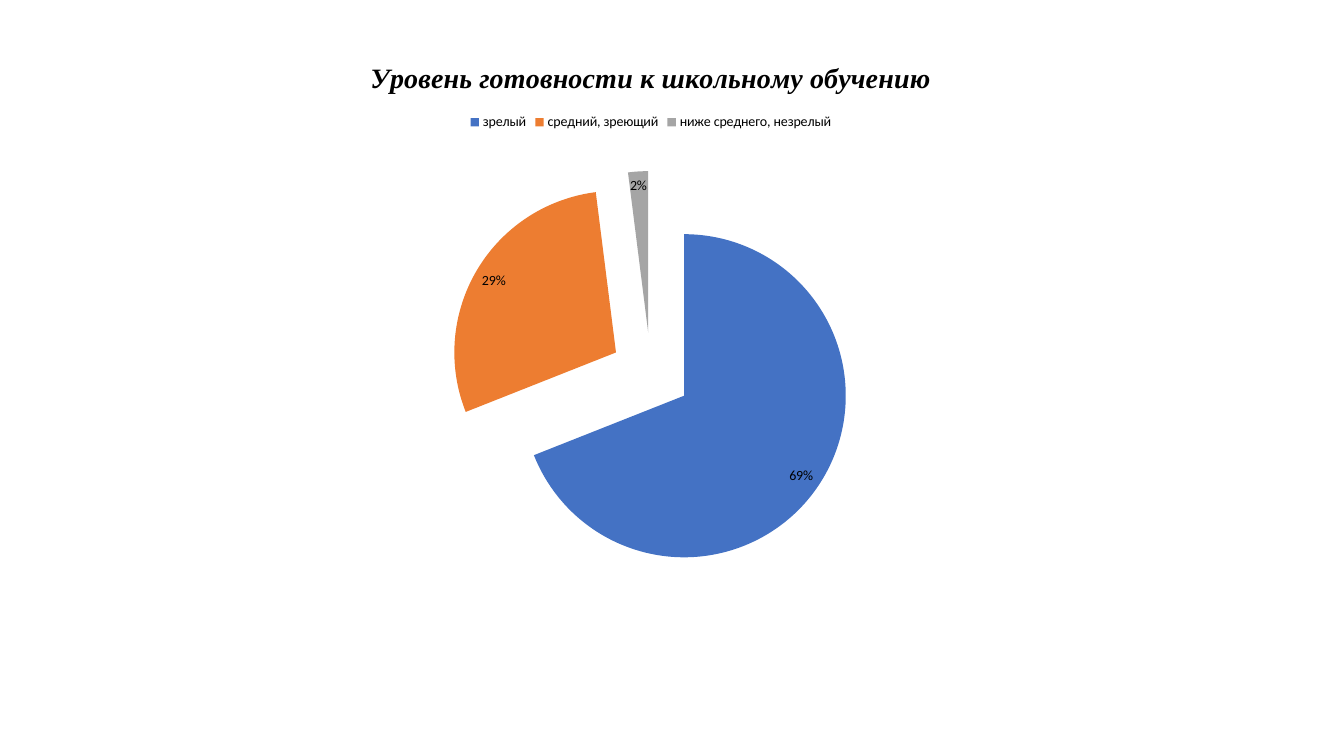
from dataclasses import dataclass

from lxml import etree
from pptx import Presentation
from pptx.chart.data import CategoryChartData
from pptx.dml.color import RGBColor
from pptx.enum.chart import XL_CHART_TYPE as ChartType
from pptx.enum.chart import XL_LABEL_POSITION as LabelPos
from pptx.enum.chart import XL_LEGEND_POSITION as LegendPos
from pptx.oxml.ns import qn
from pptx.util import Inches, Pt

TITLE = "Уровень готовности к школьному обучению"
EXPLOSION = 25
PLOT_BOX = {"x": 0.1, "y": 0.24, "w": 0.8, "h": 0.73}  # fractions of the chart


@dataclass(frozen=True)
class Slice:
    label: str
    percent: int
    color: str


SLICES = [
    Slice("зрелый", 69, "4472C4"),
    Slice("средний, зреющий", 29, "ED7D31"),
    Slice("ниже среднего, незрелый", 2, "A5A5A5"),
]


def rgb(value: str) -> RGBColor:
    return RGBColor.from_string(value)


def set_format(target, values: dict) -> None:
    for name, value in values.items():
        setattr(target, name, value)


def set_font(font, name: str, size: float, **styles: bool) -> None:
    set_format(font, {"name": name, "size": Pt(size), **styles})
    font.color.rgb = rgb("000000")


def explode(series, percent: int) -> None:
    """Move every slice of a pie series away from the centre."""
    explosion = etree.Element(qn("c:explosion"), val=str(percent))
    series._element.find(qn("c:tx")).addnext(explosion)


def place_plot(chart, box: dict[str, float]) -> None:
    """Fix the plot area at the given fractions of the chart."""
    area = chart._chartSpace.find(f".//{qn('c:plotArea')}")
    for old in area.findall(qn("c:layout")):
        area.remove(old)
    layout = etree.Element(qn("c:layout"))
    area.insert(0, layout)
    manual = etree.SubElement(layout, qn("c:manualLayout"))
    values = {"layoutTarget": "inner", "xMode": "edge", "yMode": "edge", **box}
    for name, value in values.items():
        etree.SubElement(manual, qn(f"c:{name}"), val=str(value))


def add_readiness_pie(slide) -> None:
    data = CategoryChartData()
    data.categories = [s.label for s in SLICES]
    data.add_series(TITLE, [s.percent for s in SLICES])
    chart = slide.shapes.add_chart(
        ChartType.PIE, Inches(0.58), Inches(0.38), Inches(11.75), Inches(5.49), data
    ).chart
    set_font(chart.font, "Calibri", 10)
    place_plot(chart, PLOT_BOX)

    chart.has_title = True
    tf = chart.chart_title.text_frame
    tf.text = TITLE
    set_font(tf.paragraphs[0].runs[0].font, "Times New Roman", 20, bold=True, italic=True)
    chart.chart_title.include_in_layout = False

    chart.has_legend = True
    set_format(chart.legend, {"position": LegendPos.TOP, "include_in_layout": False})

    plot = chart.plots[0]
    plot.vary_by_categories = True
    series = plot.series[0]
    explode(series, EXPLOSION)
    for i, s in enumerate(SLICES):
        fill = series.points[i].format.fill
        fill.solid()
        fill.fore_color.rgb = rgb(s.color)

    labels = series.data_labels
    set_format(labels, {
        "show_percentage": True,
        "show_value": False,
        "number_format": "0%",
        "number_format_is_linked": False,
        "position": LabelPos.INSIDE_END,
    })
    set_font(labels.font, "Calibri", 10)


def main() -> None:
    prs = Presentation()
    set_format(prs, {"slide_width": Inches(13.33), "slide_height": Inches(7.5)})
    slide = prs.slides.add_slide(prs.slide_layouts[6])
    add_readiness_pie(slide)
    prs.save("out.pptx")


if __name__ == "__main__":
    main()
